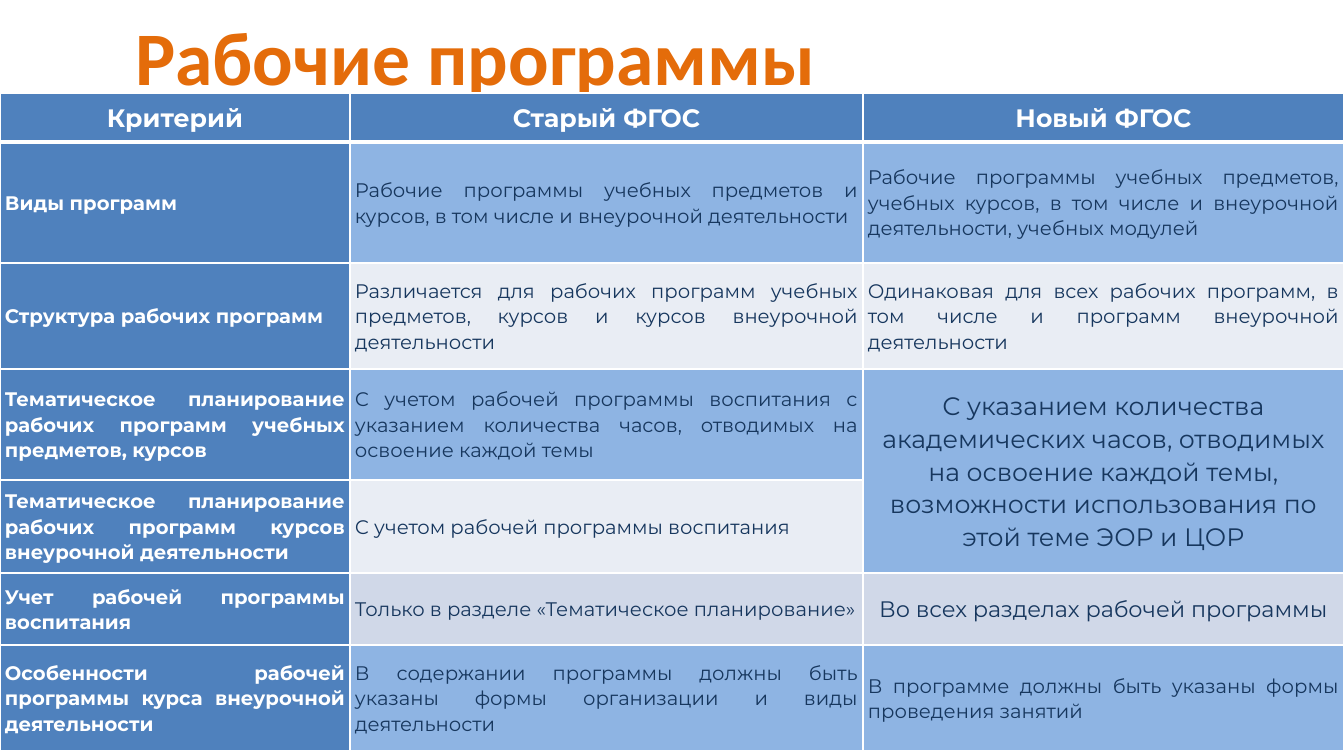
from pptx import Presentation
from pptx.dml.color import RGBColor
from pptx.enum.text import MSO_ANCHOR, PP_ALIGN
from pptx.oxml import parse_xml
from pptx.oxml.ns import nsdecls
from pptx.util import Pt

PX = 914400 / 100.8
WHITE, NAVY, ORANGE = "FFFFFF", "17375E", "E46C0A"
BLUE, SKY, PALE, GRAY = "4F81BD", "8EB4E3", "E9EDF4", "D0D8E8"
MID, WIDE = PP_ALIGN.CENTER, PP_ALIGN.JUSTIFY


def px(*nums):
    return [round(n * PX) for n in nums]


def write(para, text, font, size, color, bold, align):
    para.alignment = align
    run = para.add_run()
    run.text = text
    run.font.name = font
    run.font.size = Pt(size)
    run.font.bold = bold
    run.font.color.rgb = RGBColor.from_string(color)


deck = Presentation()
deck.slide_width, deck.slide_height = px(1344, 756)
slide = deck.slides.add_slide(deck.slide_layouts[6])

title = slide.shapes.add_textbox(*px(70, 0, 811, 111)).text_frame
title.word_wrap = True
title.vertical_anchor = MSO_ANCHOR.MIDDLE
write(title.paragraphs[0], "Рабочие программы", "Calibri", 54, ORANGE, True, MID)

# Row height, fill of the body cells, texts
rows = [
    (49, BLUE, ["Критерий", "Старый ФГОС", "Новый ФГОС"]),
    (121, SKY, [
        "Виды программ",
        "Рабочие программы учебных предметов и курсов, в том числе и внеурочной деятельности",
        "Рабочие программы учебных предметов, учебных курсов, в том числе и внеурочной "
        "деятельности, учебных модулей"]),
    (106, PALE, [
        "Структура рабочих программ",
        "Различается для рабочих программ учебных предметов, курсов и курсов внеурочной деятельности",
        "Одинаковая для всех рабочих программ, в том числе и программ внеурочной деятельности"]),
    (111, SKY, [
        "Тематическое планирование рабочих программ учебных предметов, курсов",
        "С учетом рабочей программы воспитания с указанием количества часов, отводимых на "
        "освоение каждой темы",
        "С указанием количества академических часов, отводимых на освоение каждой темы, "
        "возможности использования по этой теме ЭОР и ЦОР"]),
    (93, PALE, [
        "Тематическое планирование рабочих программ курсов внеурочной деятельности",
        "С учетом рабочей программы воспитания"]),
    (72, GRAY, [
        "Учет рабочей программы воспитания",
        "Только в разделе «Тематическое планирование»",
        "Во всех разделах рабочей программы"]),
    (106, SKY, [
        "Особенности рабочей программы курса внеурочной деятельности",
        "В содержании программы должны быть указаны формы организации и виды деятельности",
        "В программе должны быть указаны формы проведения занятий"]),
]
cols = [350, 513, 481]
large = {(3, 2): 18, (5, 2): 16}  # centred body cells and their text size

high = sum(row[0] for row in rows)
table = slide.shapes.add_table(len(rows), len(cols), *px(0, 93, sum(cols), high)).table
for col, width in zip(table.columns, px(*cols)):
    col.width = width
table.cell(3, 2).merge(table.cell(4, 2))

for r, (height, shade, texts) in enumerate(rows):
    table.rows[r].height = px(height)[0]
    for c in range(len(cols)):
        cell = table.cell(r, c)
        head = r == 0 or c == 0
        cell.fill.solid()
        cell.fill.fore_color.rgb = RGBColor.from_string(BLUE if head else shade)
        cell.vertical_anchor = MSO_ANCHOR.MIDDLE
        cell.margin_left, cell.margin_right, cell.margin_top, cell.margin_bottom = px(5, 5, 5, 5)
        for i, side in enumerate("LRTB"):
            thick = 3 if (r, side) in [(0, "B"), (1, "T")] else 1
            cell._tc.tcPr.insert(i, parse_xml(
                f'<a:ln{side} {nsdecls("a")} w="{Pt(thick)}"><a:solidFill>'
                f'<a:srgbClr val="{WHITE}"/></a:solidFill></a:ln{side}>'))
        if c < len(texts):
            para = cell.text_frame.paragraphs[0]
            para.line_spacing = 1.07
            para.space_after = Pt(11.2)
            size = 18 if r == 0 else large.get((r, c), 14)
            align = MID if r == 0 or (r, c) in large else WIDE
            write(para, texts[c], "Montserrat", size, WHITE if head else NAVY, head, align)

deck.save("out.pptx")
